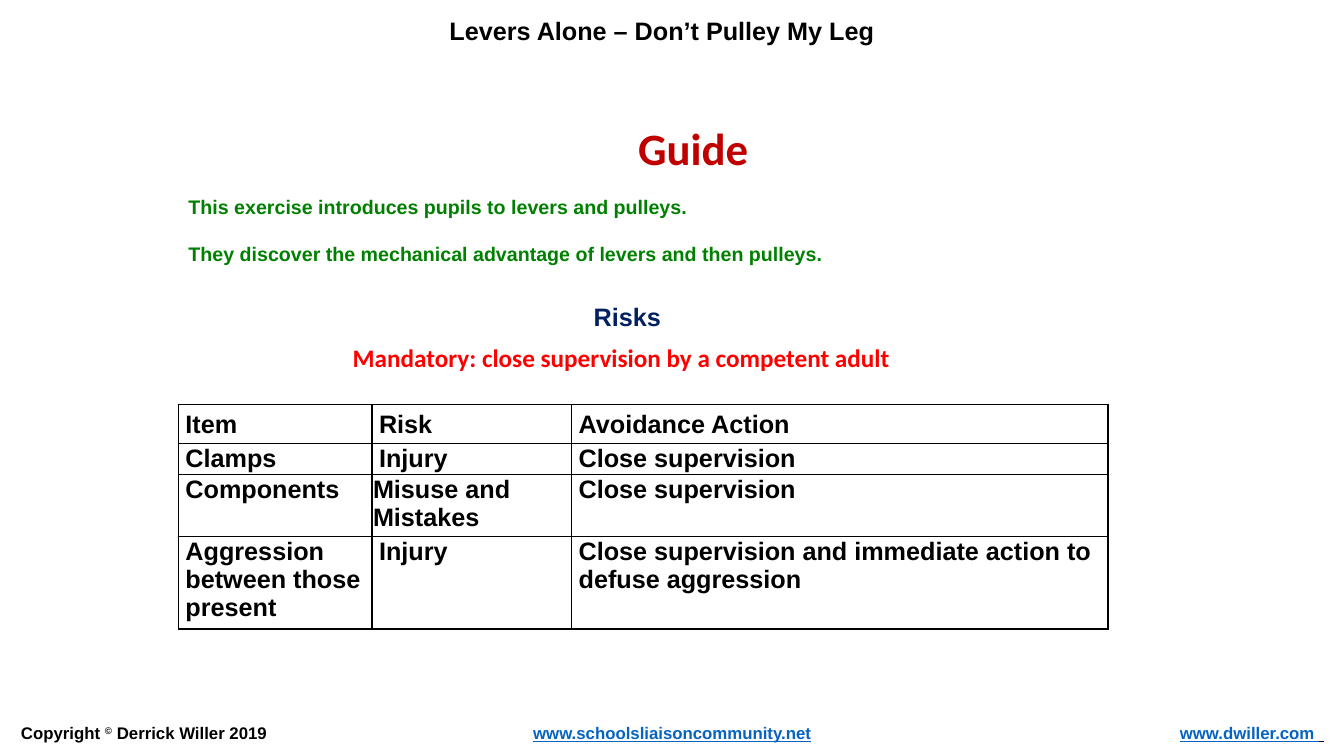
from dataclasses import dataclass

from lxml import etree
from pptx import Presentation
from pptx import util as u
from pptx.dml.color import RGBColor
from pptx.enum import text
from pptx.oxml.ns import qn

BLACK, LINK, GREEN = "000000", "0563C1", "008000"


@dataclass
class Span:
    words: str
    color: str = BLACK
    underline: bool = False
    raised: bool = False


@dataclass
class Label:
    left: float
    top: float
    width: float
    height: float
    paras: list[list[Span]]
    size: float
    font: str = "Arial"
    wrap: bool = False
    align: text.PP_ALIGN = text.PP_ALIGN.LEFT
    gap: float = 0  # points between paragraphs


def rgb(color: str) -> RGBColor:
    return RGBColor.from_string(color)


def write(para, words: str, *, size: float, font: str = "Arial", color: str = BLACK,
          underline: bool = False, raised: bool = False) -> None:
    span = para.add_run()
    span.text = words
    span.font.name = font
    span.font.size = u.Pt(size)
    span.font.bold = True
    span.font.color.rgb = rgb(color)
    if underline:
        span.font.underline = True
    if raised:
        span._r.get_or_add_rPr().set("baseline", "30000")


def draw_label(page, label: Label) -> None:
    box = page.shapes.add_textbox(*map(u.Inches, (label.left, label.top, label.width, label.height)))
    frame = box.text_frame
    frame.word_wrap = label.wrap
    frame.auto_size = text.MSO_AUTO_SIZE.SHAPE_TO_FIT_TEXT
    for index, spans in enumerate(label.paras):
        para = frame.add_paragraph() if index else frame.paragraphs[0]
        para.alignment = label.align
        if index:
            para.space_before = u.Pt(label.gap)
        for span in spans:
            write(para, span.words, size=label.size, font=label.font, color=span.color,
                  underline=span.underline, raised=span.raised)


def draw_borders(cell, color: str, points: float) -> None:
    properties = cell._tc.get_or_add_tcPr()
    for side in ("a:lnL", "a:lnR", "a:lnT", "a:lnB"):
        line = etree.SubElement(properties, qn(side), w=str(u.Pt(points)))
        fill = etree.SubElement(line, qn("a:solidFill"))
        etree.SubElement(fill, qn("a:srgbClr"), val=color)


def draw_risks(page) -> None:
    rows = len(RISKS)
    table = page.shapes.add_table(rows, len(COLUMN_WIDTHS), u.Inches(1.77), u.Inches(4.01),
                                  u.Inches(sum(COLUMN_WIDTHS)), u.Inches(sum(ROW_HEIGHTS))).table
    table.first_row = table.horz_banding = False
    for column, width in zip(table.columns, COLUMN_WIDTHS):
        column.width = u.Inches(width)
    for row, height, entries in zip(table.rows, ROW_HEIGHTS, RISKS):
        row.height = u.Inches(height)
        for cell, words in zip(row.cells, entries):
            side = 0.01 if words == "Misuse and Mistakes" else 0.07
            cell.margin_left = cell.margin_right = u.Inches(side)
            cell.margin_top, cell.margin_bottom = u.Inches(0.01), 0
            header = entries is RISKS[0]
            cell.vertical_anchor = text.MSO_ANCHOR.MIDDLE if header else text.MSO_ANCHOR.TOP
            draw_borders(cell, BLACK, 1)
            cell.fill.background()
            write(cell.text_frame.paragraphs[0], words, size=18)


LABELS = [
    # Header and footer
    Label(4.36, 0.1, 4.46, 0.4, [[Span("Levers Alone – Don’t Pulley My Leg")]], 18),
    Label(0.11, 7.12, 3.62, 0.3,
          [[Span("Copyright "), Span("©", raised=True), Span(" Derrick Willer 2019")]], 12, wrap=True),
    Label(11.33, 7.12, 1.9, 0.3,
          [[Span("www.dwiller.com ", LINK, underline=True), Span(" ", underline=True)]],
          12, wrap=True, align=text.PP_ALIGN.RIGHT),
    Label(5.19, 7.12, 3.04, 0.3,
          [[Span("www.schoolsliaisoncommunity.net", LINK, underline=True), Span(" ")]], 12),
    # Guide
    Label(6.23, 1.15, 1.47, 0.64, [[Span("Guide", "C00000")]], 32, font="Calibri"),
    Label(1.77, 1.88, 8.91, 0.81,
          [[Span("This exercise introduces pupils to levers and pulleys.", GREEN)],
           [Span("They discover the mechanical advantage of levers and then pulleys.", GREEN)]],
          14, wrap=True, gap=17),
    # Risks
    Label(5.79, 2.94, 0.88, 0.4, [[Span("Risks", "002060")]], 18),
    Label(3.4, 3.35, 5.67, 0.4,
          [[Span("Mandatory: close supervision by a competent adult", "FF0000")]], 18, font="Calibri"),
]

COLUMN_WIDTHS = [1.92, 1.98, 5.32]
ROW_HEIGHTS = [0.39, 0.31, 0.6, 0.92]
RISKS = [
    ("Item", "Risk", "Avoidance Action"),
    ("Clamps", "Injury", "Close supervision"),
    ("Components", "Misuse and Mistakes", "Close supervision"),
    ("Aggression between those present", "Injury",
     "Close supervision and immediate action to defuse aggression"),
]


def main() -> None:
    deck = Presentation()
    deck.slide_width, deck.slide_height = u.Inches(13.33), u.Inches(7.5)
    page = deck.slides.add_slide(deck.slide_layouts[6])
    for label in LABELS:
        draw_label(page, label)
    draw_risks(page)
    deck.save("out.pptx")


if __name__ == "__main__":
    main()
